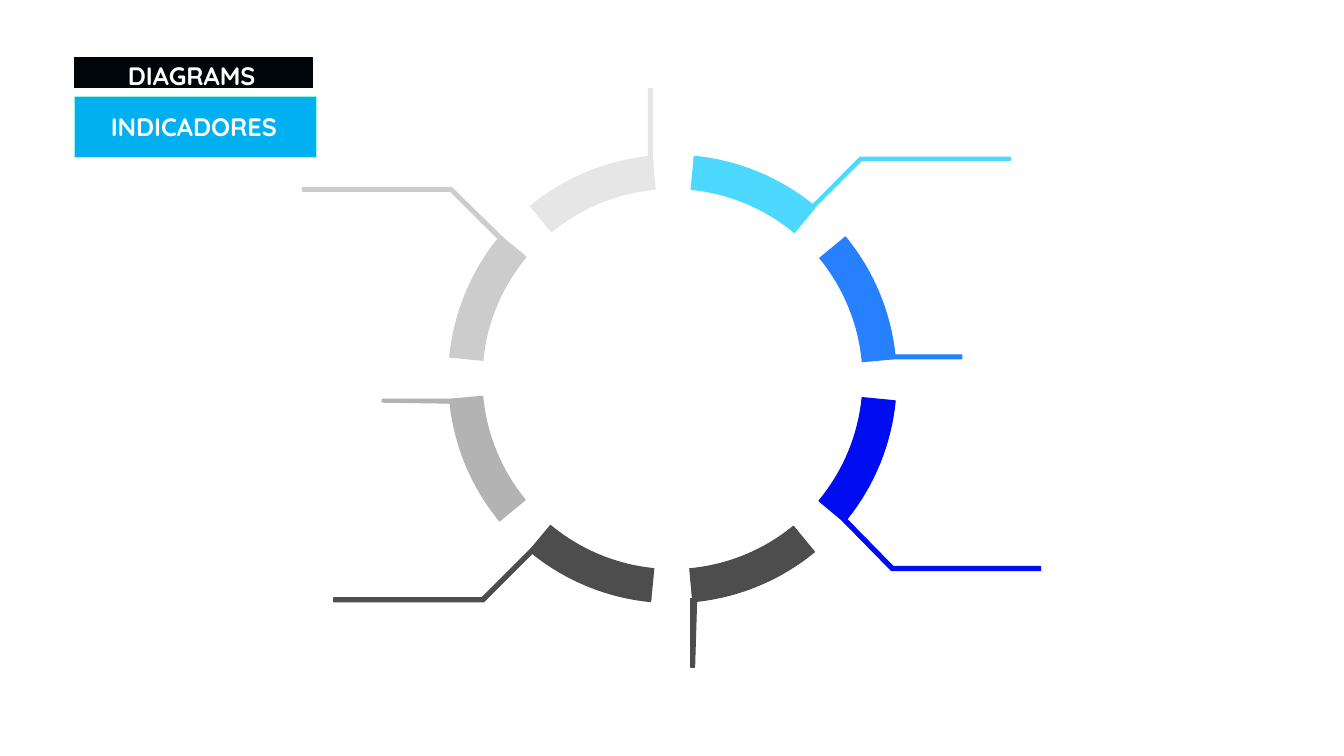
from dataclasses import dataclass
from math import cos, radians, sin

from pptx import Presentation
from pptx.dml.color import RGBColor
from pptx.enum.shapes import MSO_SHAPE as Shape
from pptx.enum.text import MSO_AUTO_SIZE as AutoSize
from pptx.util import Pt

PX = 9144
CENTRE_X, CENTRE_Y = 667, 376
INNER_RADIUS, BAND_RADIUS, RIM_RADIUS = 189, 220, 222
FIRST_ANGLE, SWEEP, STEP = 5.6, 34.2, 45
ARC_STEPS = 16
Point = tuple[float, float]


@dataclass(frozen=True)
class Segment:
    color: str
    leader: tuple[Point, ...]


@dataclass(frozen=True)
class Panel:
    left: int
    top: int
    width: int
    height: int
    fill: str
    border: str


@dataclass(frozen=True)
class Label:
    text: str
    left: int
    top: int
    width: int
    height: int
    wrap: bool


SEGMENTS = (
    Segment("4DD9FF", ((853, 156), (1002, 156), (1002, 159), (855, 159), (807, 207))),
    Segment("2680FF", ((954, 352), (954, 356), (886, 356))),
    Segment("000DF2", ((886, 562), (1032, 562), (1032, 566), (884, 566), (836, 517))),
    Segment("4D4D4D", ((689, 662), (685, 662), (685, 594))),
    Segment("4D4D4D", ((480, 597), (331, 597), (331, 593), (478, 593), (526, 545))),
    Segment("B3B3B3", ((379, 399), (379, 396), (448, 396))),
    Segment("CCCCCC", ((447, 190), (300, 190), (300, 186), (448, 186), (498, 235))),
    Segment("E6E6E6", ((643, 88), (647, 88), (647, 157))),
)
SUBTITLE_PANEL = Panel(74, 96, 240, 60, "00B0F0", "9FF2DD")
TITLE_PANEL = Panel(74, 57, 236, 30, "000509", "000509")
TITLE = Label("DIAGRAMS", 117, 55, 176, 40, True)
SUBTITLE = Label("INDICADORES", 100, 106, 189, 40, False)


def rgb(color: str) -> RGBColor:
    return RGBColor.from_string(color)


def paint(shape, fill: str, border: str) -> None:
    shape.shadow.inherit = False
    shape.fill.solid()
    shape.fill.fore_color.rgb = rgb(fill)
    shape.line.color.rgb = rgb(border)
    shape.line.width = 0


def arc(radius: int, start: float, end: float) -> list[Point]:
    angles = [radians(start + (end - start) * i / ARC_STEPS) for i in range(ARC_STEPS + 1)]
    return [(CENTRE_X + radius * sin(a), CENTRE_Y - radius * cos(a)) for a in angles]


def draw_outline(shapes, points: list[Point], color: str) -> None:
    first, *others = [(round(x * PX), round(y * PX)) for x, y in points]
    builder = shapes.build_freeform(*first, scale=1.0)
    builder.add_line_segments(others, close=True)
    paint(builder.convert_to_shape(), color, color)


def draw_panel(shapes, panel: Panel) -> None:
    box = shapes.add_shape(
        Shape.RECTANGLE, panel.left * PX, panel.top * PX, panel.width * PX, panel.height * PX
    )
    paint(box, panel.fill, panel.border)


def draw_label(shapes, label: Label) -> None:
    box = shapes.add_textbox(
        label.left * PX, label.top * PX, label.width * PX, label.height * PX
    )
    frame = box.text_frame
    frame.text = label.text
    frame.word_wrap = label.wrap
    frame.auto_size = AutoSize.SHAPE_TO_FIT_TEXT
    font = frame.paragraphs[0].runs[0].font
    font.name = "Quicksand"
    font.size = Pt(18)
    font.bold = True
    font.color.rgb = rgb("FFFFFF")


def draw_leader(shapes, segment: Segment, start: float) -> None:
    end = start + SWEEP
    rim = arc(RIM_RADIUS, start, end - 1)
    edge = arc(BAND_RADIUS - 1, end, start)
    draw_outline(shapes, [*rim, *segment.leader, *edge], segment.color)


def draw_band(shapes, segment: Segment, start: float) -> None:
    end = start + SWEEP
    points = arc(BAND_RADIUS, start, end) + arc(INNER_RADIUS, end, start)
    draw_outline(shapes, points, segment.color)


def main() -> None:
    deck = Presentation()
    deck.slide_width, deck.slide_height = 1333 * PX, 750 * PX
    page = deck.slides.add_slide(deck.slide_layouts[6])

    draw_panel(page.shapes, SUBTITLE_PANEL)
    heading = page.shapes.add_group_shape()
    draw_panel(heading.shapes, TITLE_PANEL)
    draw_label(heading.shapes, TITLE)
    draw_label(page.shapes, SUBTITLE)

    ring = page.shapes.add_group_shape()
    for draw in (draw_leader, draw_band):
        for index, segment in enumerate(SEGMENTS):
            draw(ring.shapes, segment, FIRST_ANGLE + index * STEP)

    deck.save("out.pptx")


if __name__ == "__main__":
    main()
